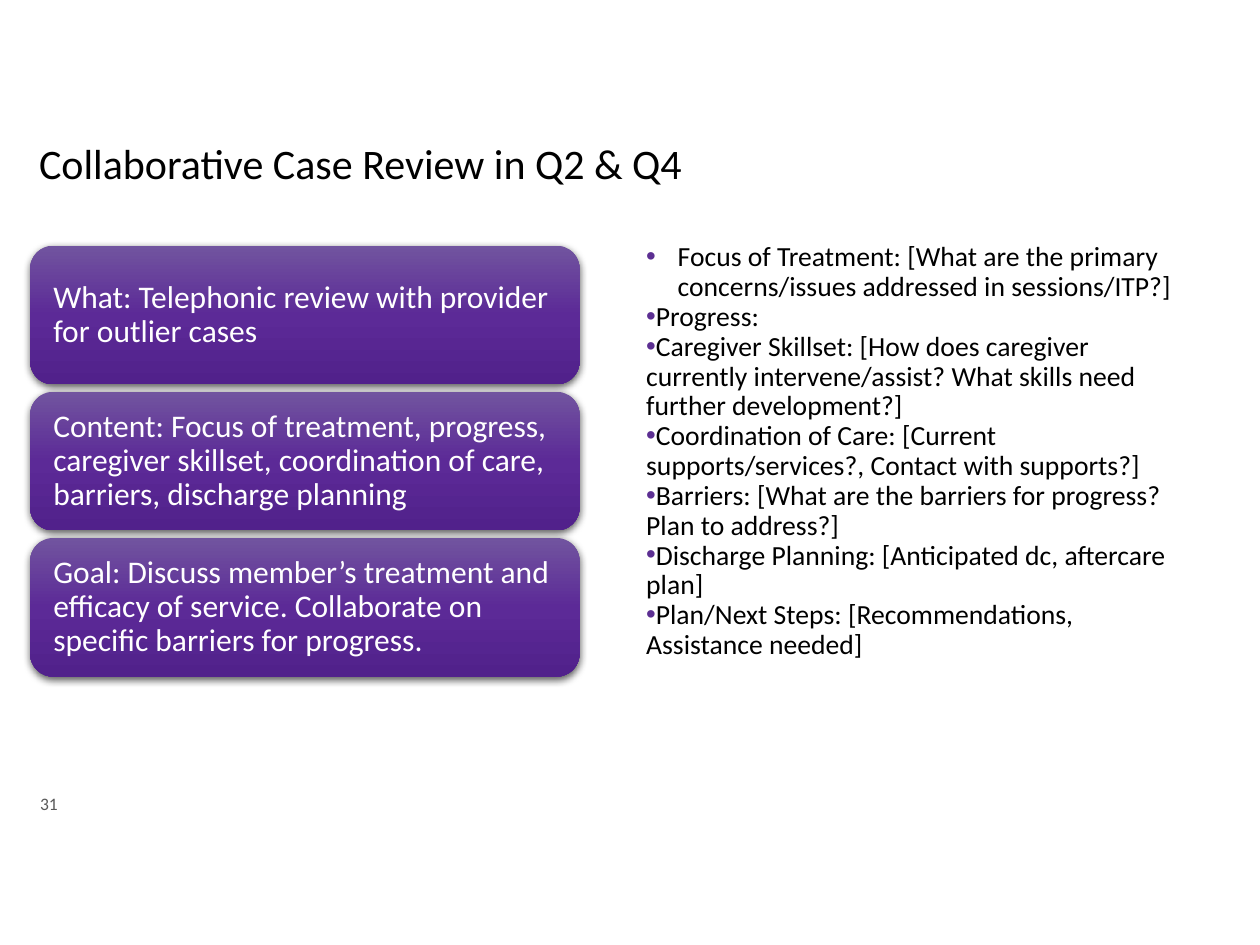
"""Build the collaborative case review slide."""
from copy import deepcopy
from dataclasses import dataclass

from lxml.etree import SubElement
from pptx import Presentation
from pptx.dml.color import RGBColor
from pptx.enum.shapes import MSO_SHAPE
from pptx.enum.text import MSO_ANCHOR, PP_ALIGN
from pptx.oxml.ns import qn
from pptx.util import Inches, Pt


@dataclass(frozen=True)
class Theme:
    font: str = "Calibri"
    ink: str = "000000"
    pale: str = "FFFFFF"
    gray: str = "595959"
    dot: str = "5C2F92"
    fade: tuple = ((0, "71549F"), (0.5, "5C2A97"), (1, "51218B"))
    title: float = 24
    card: float = 18
    body: float = 15.8
    small: float = 10


THEME = Theme()
TITLE = "Collaborative Case Review in Q2 & Q4"
NUMBER = "31"
CARDS = [
    "What: Telephonic review with provider for outlier cases",
    "Content: Focus of treatment, progress, caregiver skillset, "
    "coordination of care, barriers, discharge planning",
    "Goal: Discuss member’s treatment and efficacy of service. "
    "Collaborate on specific barriers for progress.",
]
POINTS = [
    "Focus of Treatment: [What are the primary concerns/issues addressed in sessions/ITP?]",
    "Progress:",
    "Caregiver Skillset: [How does caregiver currently intervene/assist? "
    "What skills need further development?]",
    "Coordination of Care: [Current supports/services?, Contact with supports?]",
    "Barriers: [What are the barriers for progress? Plan to address?]",
    "Discharge Planning: [Anticipated dc, aftercare plan]",
    "Plan/Next Steps: [Recommendations, Assistance needed]",
]
LEFT, TOP, WIDE, HIGH, GAP = 0.24, 1.95, 4.36, 1.1, 0.06


def place(*box):
    return [Inches(n) for n in box]


def style(para, size, color, line=0.9):
    para.alignment = PP_ALIGN.LEFT
    para.line_spacing = line
    for run in para.runs:
        run.font.name = THEME.font
        run.font.size = Pt(size)
        run.font.color.rgb = RGBColor.from_string(color)


def bullet(para, margin):
    props = para._p.get_or_add_pPr()
    props.set("marL", str(Inches(margin)))
    props.set("indent", str(Inches(-0.25)))
    tint = SubElement(props, qn("a:buClr"))
    SubElement(tint, qn("a:srgbClr"), val=THEME.dot)
    SubElement(props, qn("a:buFont"), typeface="Arial")
    SubElement(props, qn("a:buChar"), char="•")


def shade(shape):
    shape.fill.gradient()
    shape.fill.gradient_angle = 270
    stops = shape._element.spPr.find(".//" + qn("a:gsLst"))
    stops.append(deepcopy(stops[0]))
    for stop, (spot, color) in zip(shape.fill.gradient_stops, THEME.fade):
        stop.position = spot
        stop.color.rgb = RGBColor.from_string(color)
    shape.line.fill.background()
    shape.shadow.inherit = False
    glow = SubElement(
        shape._element.spPr.find(qn("a:effectLst")), qn("a:outerShdw"),
        blurRad=str(Pt(4.5)), dist=str(Pt(1.5)), dir="5400000", rotWithShape="0")
    tint = SubElement(glow, qn("a:srgbClr"), val="000000")
    SubElement(tint, qn("a:alpha"), val="63000")


def add_title(slide):
    title = slide.shapes.title
    title.left, title.top, title.width, title.height = place(0.21, 1.09, 8.27, 0.93)
    frame = title.text_frame
    frame.text = TITLE
    frame.vertical_anchor = MSO_ANCHOR.TOP
    style(frame.paragraphs[0], THEME.title, THEME.ink)


def add_card(slide, row, text):
    top = TOP + row * (HIGH + GAP)
    card = slide.shapes.add_shape(
        MSO_SHAPE.ROUNDED_RECTANGLE, *place(LEFT, top, WIDE, HIGH))
    shade(card)
    frame = card.text_frame
    frame.text = text
    frame.word_wrap = True
    frame.vertical_anchor = MSO_ANCHOR.MIDDLE
    frame.margin_left = frame.margin_right = Inches(0.13)
    style(frame.paragraphs[0], THEME.card, THEME.pale)


def add_points(slide):
    frame = slide.shapes.add_textbox(*place(5.03, 1.88, 4.51, 3.57)).text_frame
    frame.word_wrap = True
    frame.text = "\n".join(POINTS)
    for row, para in enumerate(frame.paragraphs):
        bullet(para, 0 if row else 0.25)
        style(para, THEME.body, THEME.ink)


def add_number(slide):
    frame = slide.shapes.add_textbox(*place(0.22, 6.21, 0.44, 0.3)).text_frame
    frame.word_wrap = True
    frame.text = NUMBER
    frame.vertical_anchor = MSO_ANCHOR.BOTTOM
    style(frame.paragraphs[0], THEME.small, THEME.gray, 1.0)


def main():
    deck = Presentation()
    deck.slide_width, deck.slide_height = place(10, 7.5)
    slide = deck.slides.add_slide(deck.slide_layouts[5])
    add_title(slide)
    for row, text in enumerate(CARDS):
        add_card(slide, row, text)
    add_points(slide)
    add_number(slide)
    deck.save("out.pptx")


if __name__ == "__main__":
    main()
